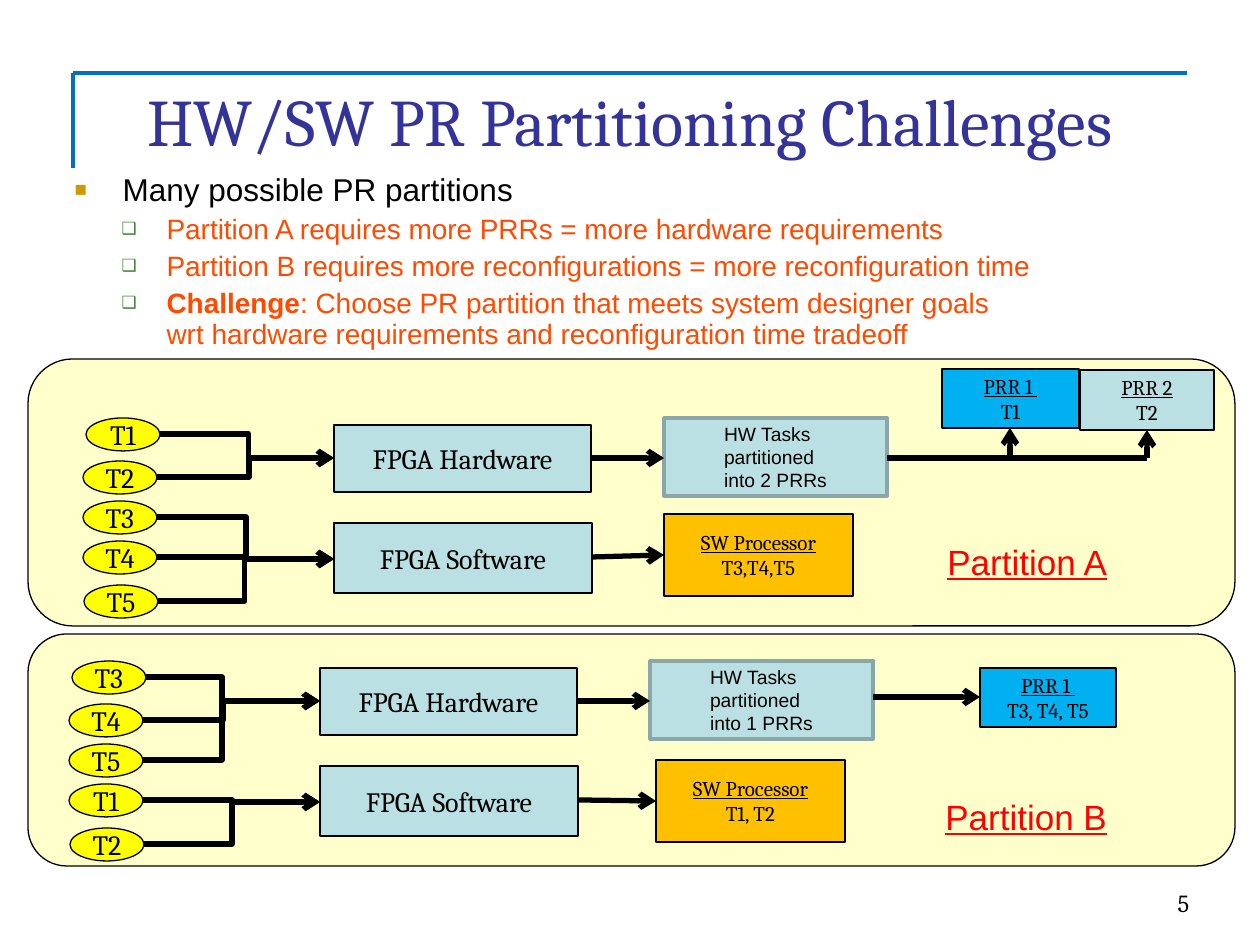
from lxml import etree
from pptx import Presentation
from pptx.dml.color import RGBColor
from pptx.enum.shapes import MSO_CONNECTOR, MSO_SHAPE
from pptx.enum.text import MSO_ANCHOR, MSO_AUTO_SIZE, PP_ALIGN
from pptx.oxml.ns import qn
from pptx.util import Pt

SCALE = 914400 // 126
STRAIGHT, ELBOW = MSO_CONNECTOR.STRAIGHT, MSO_CONNECTOR.ELBOW
RECTANGLE, ROUNDED, OVAL = MSO_SHAPE.RECTANGLE, MSO_SHAPE.ROUNDED_RECTANGLE, MSO_SHAPE.OVAL
TOP, MIDDLE = MSO_ANCHOR.TOP, MSO_ANCHOR.MIDDLE
LEFT, CENTER, RIGHT = PP_ALIGN.LEFT, PP_ALIGN.CENTER, PP_ALIGN.RIGHT

BLACK, YELLOW, TEAL, BLUE, GOLD = "000000", "FFFF00", "BBE0E3", "00B0F0", "FFC000"
TITLE = "HW/SW PR Partitioning Challenges"
BULLETS = [
    (0, "", "Many possible PR partitions"),
    (1, "", "Partition A requires more PRRs = more hardware requirements"),
    (1, "", "Partition B requires more reconfigurations = more reconfiguration time"),
    (1, "Challenge", ": Choose PR partition that meets system designer goals \v"
                     "wrt hardware requirements and reconfiguration time tradeoff"),
]
LEVELS = [
    dict(char="■", bullet="CC9900", percent=65, size=18, color=BLACK, left=48, hang=48, before=0),
    dict(char="❑", bullet="3B812F", percent=60, size=16, color="FF4A00", left=92, hang=45, before=4),
]
TASK_SIZE = (74, 33)
TASK_POSITIONS = [(86, 418), (83, 461), (83, 501), (83, 541), (84, 585)]
HARDWARE_Y, SOFTWARE_Y = 458, 559
PARTITIONS = [
    dict(offset=(0, 0), panel=(28, 359, 1207, 267),
         tasks=["T1", "T2", "T3", "T4", "T5"], hardware_count=2,
         bends=[249, 249, 246, 246, 245], regions_label="HW Tasks \vpartitioned \vinto 2 PRRs",
         processor=(664, 514), processor_tasks="T3,T4,T5",
         regions=[("PRR 1 ", "T1", BLUE, (942, 369, 137, 59)),
                  ("PRR 2", "T2", TEAL, (1080, 370, 134, 60))],
         label="Partition A", label_box=(935, 534, 214, 52)),
    dict(offset=(-14, 243), panel=(28, 634, 1207, 232),
         tasks=["T3", "T4", "T5", "T1", "T2"], hardware_count=3,
         bends=[222, 223, 222, 232, 232], regions_label="HW Tasks \vpartitioned \vinto 1 PRRs",
         processor=(656, 760), processor_tasks="T1, T2",
         regions=[("PRR 1 ", "T3, T4, T5", BLUE, (980, 668, 136, 59))],
         label="Partition B", label_box=(933, 789, 214, 52)),
]


def px(value):
    return int(value * SCALE)


def rgb(color):
    return RGBColor.from_string(color)


def style_font(font, name, size, color):
    font.name, font.size = name, Pt(size)
    font.color.rgb = rgb(color)


def place(shape, box):
    shape.left, shape.top, shape.width, shape.height = map(px, box)


def write(shape, lines, name, size, color=BLACK, align=CENTER, anchor=MIDDLE, wrap=False, underline=False):
    frame = shape.text_frame
    frame.text = "\n".join(lines)
    frame.word_wrap, frame.vertical_anchor = wrap, anchor
    for paragraph in frame.paragraphs:
        paragraph.alignment = align
        for run in paragraph.runs:
            style_font(run.font, name, size, color)
    if underline:
        frame.paragraphs[0].runs[0].font.underline = True


def add_box(slide, kind, box, fill, line=BLACK, width=0.75):
    shape = slide.shapes.add_shape(kind, *map(px, box))
    shape.shadow.inherit = False
    shape.fill.solid()
    shape.fill.fore_color.rgb = rgb(fill)
    shape.line.color.rgb = rgb(line)
    shape.line.width = Pt(width)
    return shape


def add_label(slide, box, text, name, size, **options):
    shape = slide.shapes.add_textbox(*map(px, box))
    write(shape, [text], name, size, anchor=TOP, wrap=True, **options)


def add_line(slide, start, end, color=BLACK, width=3, arrow=True, bend=None):
    kind = STRAIGHT if bend is None else ELBOW
    connector = slide.shapes.add_connector(kind, *map(px, start + end))
    connector.line.color.rgb = rgb(color)
    connector.line.width = Pt(width)
    properties = connector._element.spPr
    if arrow:
        etree.SubElement(properties.find(qn("a:ln")), qn("a:tailEnd"), type="arrow")
    if bend is not None:
        share = round((bend - start[0]) / (end[0] - start[0]) * 100000)
        guides = properties.find(qn("a:prstGeom")).get_or_add_avLst()
        etree.SubElement(guides, qn("a:gd"), name="adj1", fmla=f"val {share}")
    etree.SubElement(properties, qn("a:effectLst"))


def add_bullets(placeholder):
    place(placeholder, (62, 168, 1218, 103))
    frame = placeholder.text_frame
    frame.text = "\n".join(lead + text for _, lead, text in BULLETS)
    frame.auto_size, frame.vertical_anchor = MSO_AUTO_SIZE.NONE, TOP
    for paragraph, (level, lead, text) in zip(frame.paragraphs, BULLETS):
        style = LEVELS[level]
        if lead:
            paragraph.text = ""
            paragraph.add_run().text = lead
            paragraph.runs[0].font.bold = True
            first, second = text.split("\v")
            paragraph.add_run().text = first
            paragraph.add_line_break()
            paragraph.add_run().text = second
        paragraph.level = level
        properties = paragraph._p.get_or_add_pPr()
        properties.set("marL", str(px(style["left"])))
        properties.set("indent", str(-px(style["hang"])))
        color = etree.SubElement(properties, qn("a:buClr"))
        etree.SubElement(color, qn("a:srgbClr"), val=style["bullet"])
        etree.SubElement(properties, qn("a:buSzPct"), val=str(style["percent"] * 1000))
        etree.SubElement(properties, qn("a:buChar"), char=style["char"])
        paragraph.line_spacing = 0.9
        paragraph.space_before = Pt(style["before"])
        for run in paragraph.runs:
            style_font(run.font, "Arial", style["size"], style["color"])


def add_partition(slide, data):
    dx, dy = data["offset"]
    hardware_y, software_y = HARDWARE_Y + dy, SOFTWARE_Y + dy
    add_box(slide, ROUNDED, data["panel"], "FFFFCC")

    width, height = TASK_SIZE
    for index, (task, (x, y), bend) in enumerate(zip(data["tasks"], TASK_POSITIONS, data["bends"])):
        x, y = x + dx, y + dy
        target = hardware_y if index < data["hardware_count"] else software_y
        add_line(slide, (x + width, y + height // 2), (334 + dx, target), bend=bend)
        write(add_box(slide, OVAL, (x, y, width, height), YELLOW), [task], "Cambria", 16)

    for text, box in [("FPGA Hardware", (334, 425, 257, 67)), ("FPGA Software", (334, 523, 258, 70))]:
        x, y, *size = box
        write(add_box(slide, RECTANGLE, (x + dx, y + dy, *size), TEAL), [text], "Cambria", 16)

    grouping = add_box(slide, RECTANGLE, (664 + dx, 418 + dy, 223, 78), TEAL, "8AA6A8", 2)
    write(grouping, [data["regions_label"]], "Arial", 11, align=LEFT, wrap=True)
    grouping.text_frame.margin_left = px(60)
    add_line(slide, (591 + dx, hardware_y), (664 + dx, hardware_y))

    processor_x, processor_y = data["processor"]
    processor = add_box(slide, RECTANGLE, (processor_x, processor_y, 189, 82), GOLD)
    write(processor, ["SW Processor", data["processor_tasks"]], "Cambria", 12, underline=True)
    add_line(slide, (592 + dx, software_y - 2), (processor_x, processor_y + 41))

    for name, tasks, fill, box in data["regions"]:
        write(add_box(slide, RECTANGLE, box, fill), [name, tasks], "Cambria", 12, underline=True)
        x, y, width, height = box
        start = 887 + dx
        if y + height < hardware_y:
            corner = (x + width // 2, hardware_y)
            add_line(slide, (start, hardware_y), corner, arrow=False)
            add_line(slide, corner, (corner[0], y + height))
        else:
            add_line(slide, (start, y + height // 2), (x, y + height // 2))

    add_label(slide, data["label_box"], data["label"], "Arial", 20, color="FF0000", align=LEFT, underline=True)


def main():
    presentation = Presentation()
    presentation.slide_width, presentation.slide_height = px(1260), px(945)
    slide = presentation.slides.add_slide(presentation.slide_layouts[1])
    for end in [(1187, 73), (73, 168)]:
        add_line(slide, (73, 73), end, "0070C0", 2.25, arrow=False)
    title = slide.shapes.title
    place(title, (0, 73, 1260, 93))
    write(title, [TITLE], "Cambria", 38, "333399", wrap=True)
    add_bullets(slide.placeholders[1])
    for data in PARTITIONS:
        add_partition(slide, data)
    add_label(slide, (945, 882, 262, 63), "5 ", "Cambria", 14, align=RIGHT)
    presentation.save("out.pptx")


if __name__ == "__main__":
    main()
